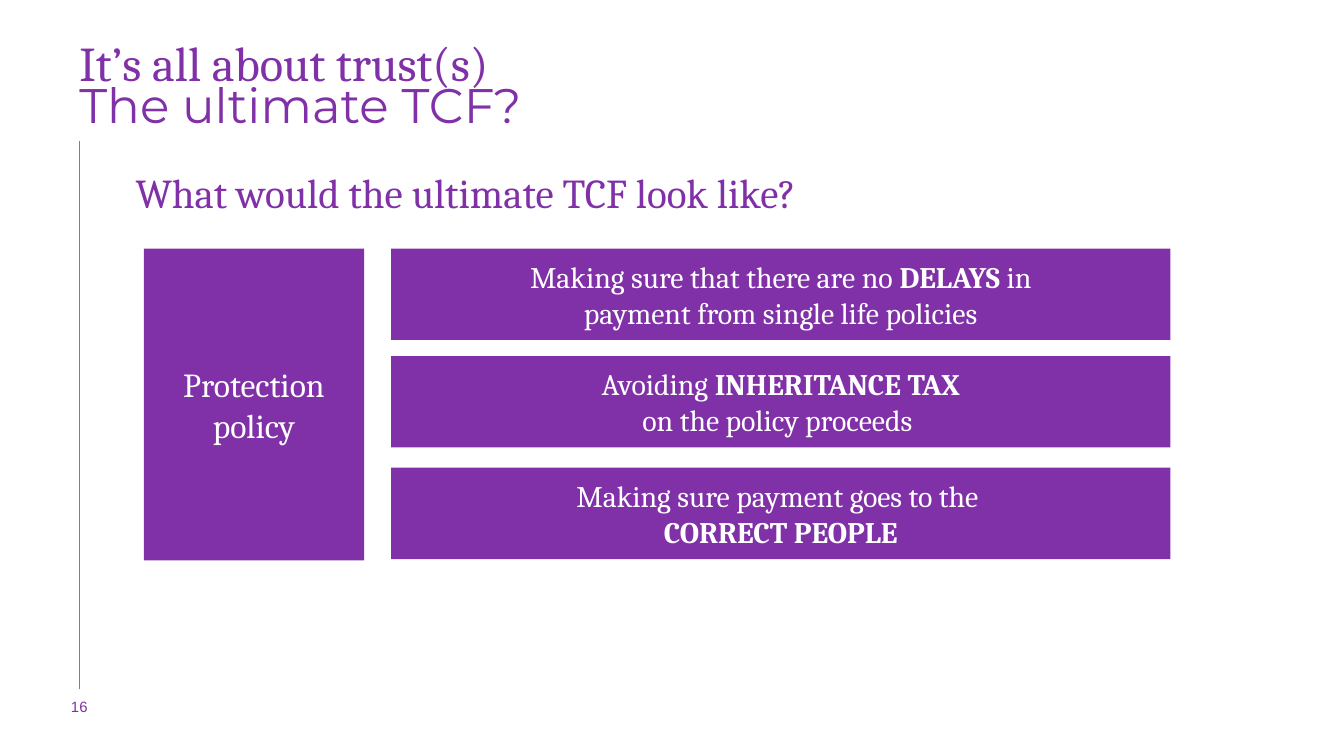
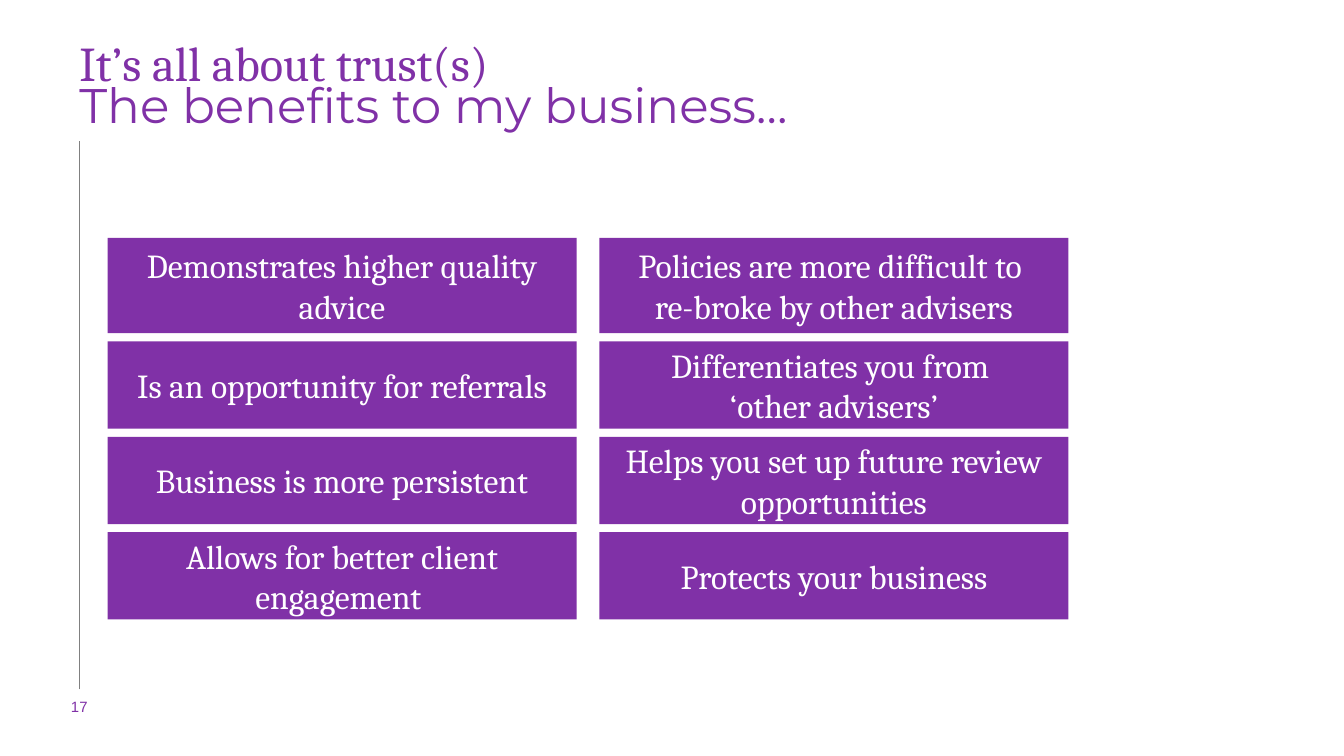
from dataclasses import dataclass

from lxml.etree import SubElement
from pptx import Presentation
from pptx.dml.color import RGBColor
from pptx.enum.shapes import MSO_CONNECTOR, MSO_SHAPE
from pptx.enum.text import MSO_ANCHOR, PP_ALIGN
from pptx.oxml.ns import qn
from pptx.presentation import Presentation as Deck
from pptx.slide import Slide
from pptx.util import Inches, Pt

PURPLE = RGBColor(0x80, 0x31, 0xA7)
WHITE = RGBColor(0xFF, 0xFF, 0xFF)
GREY = RGBColor(0x80, 0x80, 0x80)
SERIF = "Cambria"
DISPLAY = "Montserrat"
SANS = "Arial"

SLIDE_WIDTH = Inches(10)
SLIDE_HEIGHT = SLIDE_WIDTH * 9 // 16
MARGIN = 0.59
TITLE = "It’s all about trust(s)"
BOLD_MARK = "*"


@dataclass(frozen=True)
class Area:
    left: float
    top: float
    width: float
    height: float

    def lengths(self) -> tuple[Inches, ...]:
        return tuple(map(Inches, (self.left, self.top, self.width, self.height)))


@dataclass(frozen=True)
class TextStyle:
    font: str
    size: int
    color: RGBColor = PURPLE
    align: PP_ALIGN = PP_ALIGN.LEFT
    line_spacing: float = 1.0


@dataclass(frozen=True)
class Panel:
    """A filled rectangle; each line is a paragraph, with *bold* parts marked."""
    area: Area
    lines: tuple[str, ...]
    size: int = 18


TITLE_STYLE = TextStyle(SERIF, 26, line_spacing=0.88)
SUBTITLE_STYLE = TextStyle(DISPLAY, 26, line_spacing=0.8)
QUESTION_STYLE = TextStyle(SERIF, 22)
NUMBER_STYLE = TextStyle(SANS, 8, align=PP_ALIGN.CENTER)


def style_paragraph(paragraph, style: TextStyle) -> None:
    paragraph.alignment = style.align
    paragraph.line_spacing = style.line_spacing
    paragraph.font.name = style.font
    paragraph.font.size = Pt(style.size)
    paragraph.font.color.rgb = style.color


def add_text(slide: Slide, area: Area, text: str, style: TextStyle,
             inset: tuple[float, float] = (0, 0)) -> None:
    frame = slide.shapes.add_textbox(*area.lengths()).text_frame
    frame.word_wrap = True
    frame.margin_left = frame.margin_right = Inches(inset[0])
    frame.margin_top = frame.margin_bottom = Inches(inset[1])
    paragraph = frame.paragraphs[0]
    paragraph.add_run().text = text
    style_paragraph(paragraph, style)


def add_panel(slide: Slide, panel: Panel) -> None:
    shape = slide.shapes.add_shape(MSO_SHAPE.RECTANGLE, *panel.area.lengths())
    shape.shadow.inherit = False
    shape.fill.solid()
    shape.fill.fore_color.rgb = PURPLE
    shape.line.fill.background()
    frame = shape.text_frame
    frame.word_wrap = True
    frame.vertical_anchor = MSO_ANCHOR.MIDDLE
    style = TextStyle(SERIF, panel.size, WHITE, PP_ALIGN.CENTER)
    for index, line in enumerate(panel.lines):
        paragraph = frame.add_paragraph() if index else frame.paragraphs[0]
        for position, part in enumerate(line.split(BOLD_MARK)):
            if part:
                run = paragraph.add_run()
                run.text = part
                if position % 2:
                    run.font.bold = True
        style_paragraph(paragraph, style)


def add_margin_rule(slide: Slide) -> None:
    rule = slide.shapes.add_connector(
        MSO_CONNECTOR.STRAIGHT,
        Inches(MARGIN), Inches(5.13), Inches(MARGIN), Inches(1.05))
    rule.line.color.rgb = GREY
    rule.line.width = Pt(0.75)
    SubElement(rule._element.spPr, qn("a:effectLst"))


def add_base_slide(presentation: Deck, number: int, subtitle: str) -> Slide:
    slide = presentation.slides.add_slide(presentation.slide_layouts[6])
    add_margin_rule(slide)
    add_text(slide, Area(0.24, 5.19, 0.7, 0.3), str(number), NUMBER_STYLE)
    add_text(slide, Area(MARGIN, 0.3, 9.23, 0.48), TITLE, TITLE_STYLE)
    add_text(slide, Area(MARGIN, 0.64, 9.22, 0.42), subtitle, SUBTITLE_STYLE)
    return slide


def build_ultimate_slide(presentation: Deck) -> None:
    slide = add_base_slide(presentation, 16, "The ultimate TCF?")
    add_text(slide, Area(0.91, 1.2, 7.92, 3.63),
             "What would the ultimate TCF look like?", QUESTION_STYLE, (0.1, 0.05))
    add_panel(slide, Panel(Area(1.07, 1.85, 1.64, 2.32), ("Protection policy",)))
    goals = (
        (1.85, ("Making sure that there are no *DELAYS *in",
                "payment from single life policies")),
        (2.65, ("Avoiding *INHERITANCE TAX*", "on the policy proceeds ")),
        (3.48, ("Making sure payment goes to the ", "*CORRECT PEOPLE*")),
    )
    for top, lines in goals:
        add_panel(slide, Panel(Area(2.91, top, 5.8, 0.68), lines, 16))


def build_benefits_slide(presentation: Deck) -> None:
    slide = add_base_slide(presentation, 17, "The benefits to my business…")
    column_lefts = (0.8, 4.46)
    row_gap = 0.06
    rows = (
        (0.71, ("Demonstrates higher quality advice",),
         ("Policies are more difficult to ", "re-broke by other advisers")),
        (0.65, ("Is an opportunity for referrals",),
         ("Differentiates you from ", "‘other advisers’")),
        (0.65, ("Business is more persistent",),
         ("Helps you set up future review opportunities",)),
        (0.65, ("Allows for better client engagement ",),
         ("Protects your business",)),
    )
    top = 1.77
    for height, *benefits in rows:
        for left, lines in zip(column_lefts, benefits):
            add_panel(slide, Panel(Area(left, top, 3.49, height), lines))
        top += height + row_gap


def main() -> None:
    presentation = Presentation()
    presentation.slide_width = SLIDE_WIDTH
    presentation.slide_height = SLIDE_HEIGHT
    build_ultimate_slide(presentation)
    build_benefits_slide(presentation)
    presentation.save("out.pptx")


if __name__ == "__main__":
    main()
